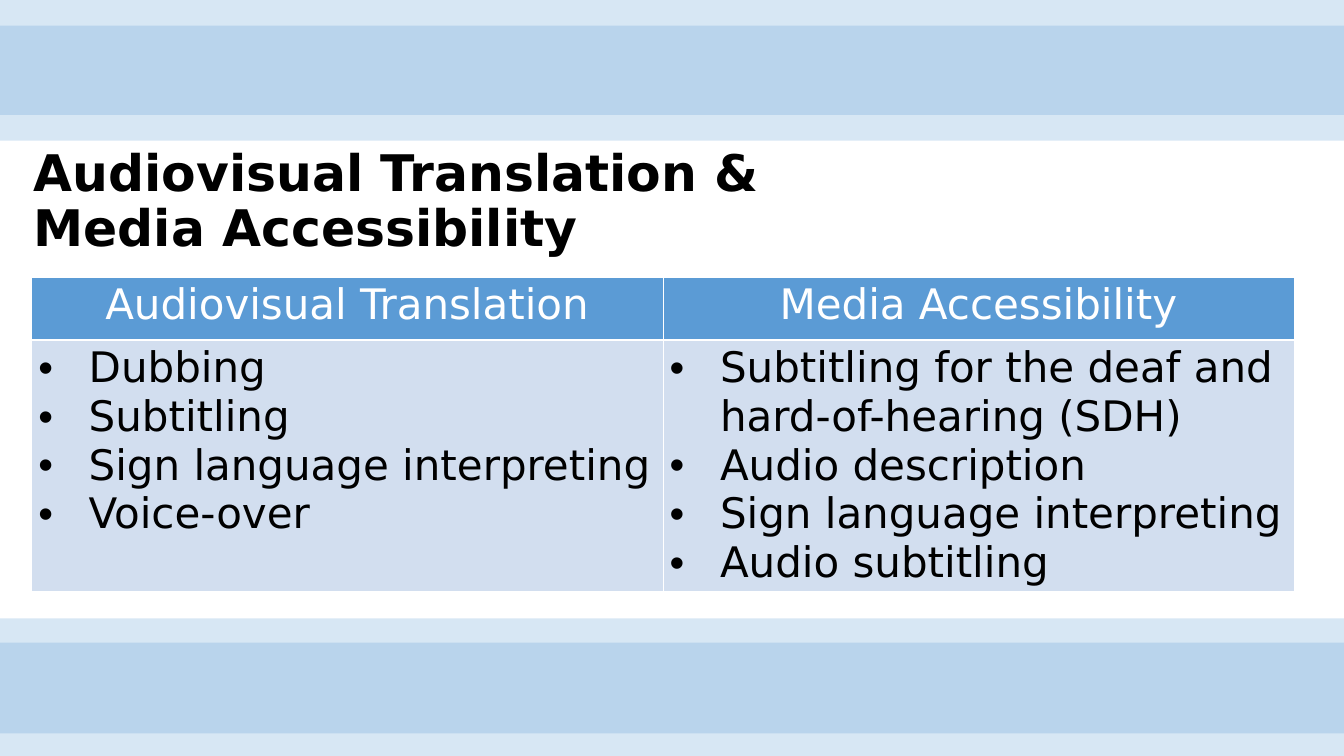
from pptx import Presentation
from pptx.dml.color import RGBColor
from pptx.enum.shapes import MSO_SHAPE as Shape
from pptx.enum.text import MSO_ANCHOR as Anchor, PP_ALIGN as Align
from pptx.oxml.ns import qn
from pptx.util import Emu, Inches, Pt
from lxml.etree import SubElement

FONT = "DejaVu Sans"
BLUE, PALE_BLUE, WHITE, BLACK = "5B9BD5", "D2DEEF", "FFFFFF", "000000"


def paint(color_format, color):
    """Set a solid fill or a font to a hex colour."""
    if hasattr(color_format, "solid"):
        color_format.solid()
        color_format = color_format.fore_color
    color_format.rgb = RGBColor.from_string(color)


def add_run(paragraph, text, size, color, bold=False):
    run = paragraph.add_run()
    run.text = text
    run.font.name, run.font.size, run.font.bold = FONT, Pt(size), bold
    paint(run.font.color, color)


presentation = Presentation()
presentation.slide_width, presentation.slide_height = Inches(20), Inches(11.25)
slide_width, slide_height = presentation.slide_width, presentation.slide_height
slide = presentation.slides.add_slide(presentation.slide_layouts[5])

# Overlapping translucent bands, turned on their side, at the top and bottom edges
band = Inches(1.71)
for center in (0.926, 0.894, 0.076, 0.11):
    shape = slide.shapes.add_shape(
        Shape.RECTANGLE, Emu((slide_width - band) // 2),
        Emu(int(slide_height * center - slide_width / 2)), band, slide_width)
    shape.rotation = 270
    shape.shadow.inherit = False
    paint(shape.fill, BLUE)
    shape.line.fill.background()
    fill_color = shape.fill._xPr.find(qn("a:solidFill"))[0]
    SubElement(fill_color, qn("a:alpha"), val="24000")

# Title, brought in front of the bands
title = slide.shapes.title
slide.shapes._spTree.append(title._element)
title.left, title.top = Inches(0.35), Inches(2.16)
title.width, title.height = Inches(13.44), Inches(1.71)
frame = title.text_frame
frame.word_wrap = True
frame.vertical_anchor = Anchor.MIDDLE
frame.margin_left = frame.margin_right = Inches(0.15)
frame.margin_top = frame.margin_bottom = Inches(0.07)
paragraph = frame.paragraphs[0]
paragraph.alignment = Align.LEFT
paragraph.line_spacing = 0.9
add_run(paragraph, "Audiovisual Translation & Media Accessibility", 54, BLACK, True)

# Table: one column per field, a heading above a bulleted list
fields = {
    "Audiovisual Translation": [
        "Dubbing", "Subtitling", "Sign language interpreting", "Voice-over"],
    "Media Accessibility": [
        "Subtitling for the deaf and hard-of-hearing (SDH)", "Audio description",
        "Sign language interpreting", "Audio subtitling"],
}
table = slide.shapes.add_table(
    2, len(fields), Inches(0.47), Inches(4.13), Inches(18.79), Inches(4.78)).table
table.rows[0].height, table.rows[1].height = Inches(0.93), Inches(3.16)

for column, (heading, items) in enumerate(fields.items()):
    head, body = table.cell(0, column), table.cell(1, column)

    # Borders go before the fill
    for cell, color, bottom in ((head, BLUE, 3), (body, PALE_BLUE, 1)):
        properties = cell._tc.get_or_add_tcPr()
        for side, width in (("L", 1), ("R", 1), ("T", 1), ("B", bottom)):
            border = SubElement(properties, qn(f"a:ln{side}"), w=str(Pt(width)))
            SubElement(SubElement(border, qn("a:solidFill")), qn("a:srgbClr"), val=WHITE)
        paint(cell.fill, color)

    paragraph = head.text_frame.paragraphs[0]
    paragraph.alignment = Align.CENTER
    add_run(paragraph, heading, 45, WHITE)

    for index, item in enumerate(items):
        frame = body.text_frame
        paragraph = frame.add_paragraph() if index else frame.paragraphs[0]
        properties = paragraph._p.get_or_add_pPr()
        properties.set("marL", str(Inches(0.75)))
        properties.set("indent", str(Inches(-0.75)))
        SubElement(properties, qn("a:buFont"), typeface="Arial")
        SubElement(properties, qn("a:buChar"), char="•")
        add_run(paragraph, item, 45, BLACK)

presentation.save("out.pptx")
